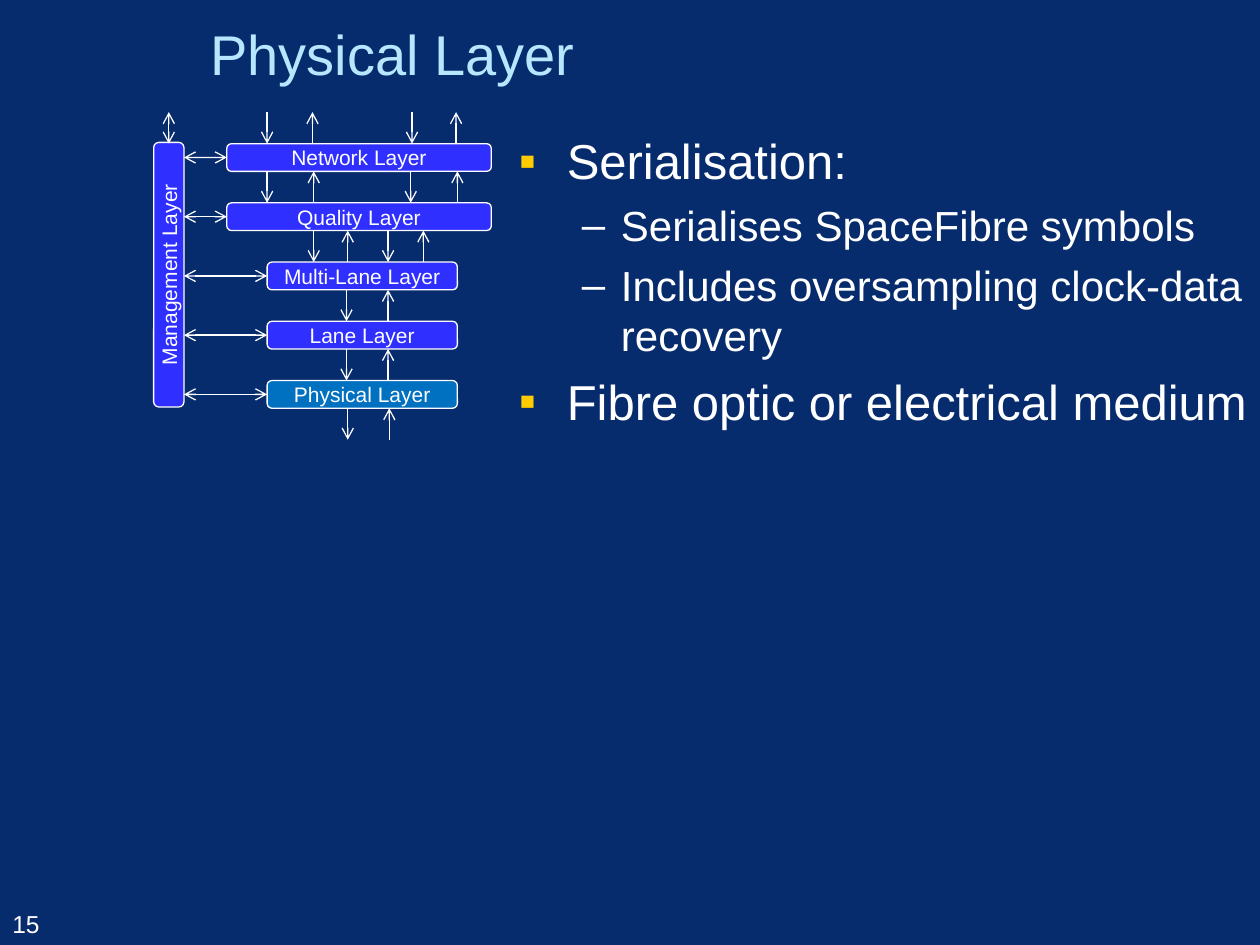
from typing import NamedTuple

from lxml import etree
from pptx import Presentation
from pptx.dml.color import RGBColor
from pptx.enum.shapes import MSO_CONNECTOR, MSO_SHAPE
from pptx.enum.text import MSO_ANCHOR, PP_ALIGN
from pptx.oxml.ns import qn
from pptx.util import Inches, Pt

STRAIGHT = MSO_CONNECTOR.STRAIGHT
ROUNDED = MSO_SHAPE.ROUNDED_RECTANGLE
MIDDLE, BOTTOM = MSO_ANCHOR.MIDDLE, MSO_ANCHOR.BOTTOM
LEFT, CENTER = PP_ALIGN.LEFT, PP_ALIGN.CENTER

NAVY = RGBColor(0x07, 0x2C, 0x6D)
PALE_BLUE = RGBColor(0xB7, 0xE7, 0xFF)
WHITE = RGBColor(0xFF, 0xFF, 0xFF)
VIOLET = RGBColor(0x2F, 0x2F, 0xFF)
BLUE = RGBColor(0x00, 0x70, 0xC0)
GOLD = RGBColor(0xFF, 0xCC, 0x00)

FONT = "Arial"
FIRST_ROW, ROW_PITCH = 1.14, 0.47
BOX_HEIGHT, ARROW_LENGTH = 0.22, 0.25
MANAGEMENT_RIGHT = 1.46


class Layer(NamedTuple):
    name: str
    left: float
    width: float
    color: RGBColor = VIOLET


class BulletStyle(NamedTuple):
    mark: str
    color: RGBColor
    size: int
    indent: float
    hanging: float
    space_before: float


class Item(NamedTuple):
    text: str
    level: int


LAYERS = [
    Layer("Network Layer", 1.8, 2.1),
    Layer("Quality Layer", 1.8, 2.1),
    Layer("Multi-Lane Layer", 2.12, 1.51),
    Layer("Lane Layer", 2.12, 1.51),
    Layer("Physical Layer", 2.12, 1.51, BLUE),
]
SIGNALS = [
    (2.12, 2.48, 3.27, 3.62),
    (2.12, 2.49, 3.26, 3.63),
    (2.49, 2.76, 3.08, 3.36),
    (2.75, 3.08),
    (2.75, 3.08),
    (2.76, 3.09),
]
STYLES = [
    BulletStyle("▪", GOLD, 28, 0.38, 0.38, 6.4),
    BulletStyle("–", WHITE, 24, 0.81, 0.31, 5.5),
]
ITEMS = [
    Item("Serialisation:", 0),
    Item("Serialises SpaceFibre symbols", 1),
    Item("Includes oversampling clock-data recovery", 1),
    Item("Fibre optic or electrical medium", 0),
]


def format_paragraph(paragraph, size: float, color: RGBColor, alignment=LEFT) -> None:
    paragraph.alignment = alignment
    paragraph.font.name = FONT
    paragraph.font.size = Pt(size)
    paragraph.font.color.rgb = color


def add_bullet(paragraph, style: BulletStyle) -> None:
    properties = paragraph._p.get_or_add_pPr()
    properties.set("marL", str(Inches(style.indent)))
    properties.set("indent", str(-Inches(style.hanging)))
    bullet_color = etree.SubElement(properties, qn("a:buClr"))
    etree.SubElement(bullet_color, qn("a:srgbClr"), val=str(style.color))
    etree.SubElement(properties, qn("a:buFont"), typeface=FONT)
    etree.SubElement(properties, qn("a:buChar"), char=style.mark)


def add_box(slide, name: str, left: float, top: float, width: float,
            height: float, color: RGBColor):
    box = slide.shapes.add_shape(
        ROUNDED, Inches(left), Inches(top), Inches(width), Inches(height))
    box.adjustments[0] = 0.17
    box.shadow.inherit = False
    box.fill.solid()
    box.fill.fore_color.rgb = color
    box.line.color.rgb = WHITE
    box.line.width = Pt(0.75)
    frame = box.text_frame
    frame.word_wrap = False
    frame.vertical_anchor = MIDDLE
    frame.margin_left = frame.margin_right = frame.margin_top = frame.margin_bottom = 0
    frame.text = name
    format_paragraph(frame.paragraphs[0], 12, WHITE, CENTER)
    return box


def add_arrow(slide, start: tuple[float, float], end: tuple[float, float],
              both_ends: bool = False):
    arrow = slide.shapes.add_connector(
        STRAIGHT, *(Inches(value) for value in (*start, *end)))
    arrow.line.color.rgb = WHITE
    arrow.line.width = Pt(0.75)
    line = arrow.line._get_or_add_ln()
    if both_ends:
        etree.SubElement(line, qn("a:headEnd"), type="arrow")
    etree.SubElement(line, qn("a:tailEnd"), type="arrow")
    etree.SubElement(arrow._element.spPr, qn("a:effectLst"))
    return arrow


def add_title(slide) -> None:
    title = slide.shapes.title
    title.left, title.top = Inches(1.57), Inches(0)
    title.width, title.height = Inches(8.43), Inches(0.84)
    title.text_frame.text = "Physical Layer"
    title.text_frame.vertical_anchor = MIDDLE
    format_paragraph(title.text_frame.paragraphs[0], 32, PALE_BLUE)


def add_text_frame(slide, left: float, top: float, width: float, height: float):
    text_box = slide.shapes.add_textbox(
        Inches(left), Inches(top), Inches(width), Inches(height))
    text_box.text_frame.word_wrap = True
    return text_box.text_frame


def add_bullet_list(slide) -> None:
    frame = add_text_frame(slide, 4.02, 0.99, 5.98, 6.51)
    for index, item in enumerate(ITEMS):
        paragraph = frame.add_paragraph() if index else frame.paragraphs[0]
        style = STYLES[item.level]
        paragraph.text = item.text
        paragraph.level = item.level
        paragraph.space_before = Pt(style.space_before)
        format_paragraph(paragraph, style.size, WHITE)
        add_bullet(paragraph, style)


def add_slide_number(slide) -> None:
    frame = add_text_frame(slide, 0, 6.98, 1.06, 0.52)
    frame.vertical_anchor = BOTTOM
    frame.text = "15"
    format_paragraph(frame.paragraphs[0], 14, WHITE)


def add_layer_stack(slide) -> None:
    management = add_box(slide, "Management Layer", 0.29, 2.06, 2.1, 0.24, VIOLET)
    management.rotation = 270
    add_arrow(slide, (1.34, FIRST_ROW - ARROW_LENGTH), (1.34, FIRST_ROW), True)

    for row, layer in enumerate(LAYERS):
        top = FIRST_ROW + row * ROW_PITCH
        middle = top + BOX_HEIGHT / 2
        box = add_box(slide, layer.name, layer.left, top, layer.width,
                      BOX_HEIGHT, layer.color)
        link = add_arrow(slide, (MANAGEMENT_RIGHT, middle), (layer.left, middle), True)
        link.end_connect(box, 1)

    for row, positions in enumerate(SIGNALS):
        lower = FIRST_ROW + row * ROW_PITCH
        upper = lower - ARROW_LENGTH
        for index, x in enumerate(positions):
            start, end = (upper, lower) if index % 2 == 0 else (lower, upper)
            add_arrow(slide, (x, start), (x, end))


def main() -> None:
    presentation = Presentation()
    presentation.slide_width = Inches(10)
    presentation.slide_height = Inches(7.5)
    slide = presentation.slides.add_slide(presentation.slide_layouts[5])
    slide.background.fill.solid()
    slide.background.fill.fore_color.rgb = NAVY
    add_title(slide)
    add_bullet_list(slide)
    add_slide_number(slide)
    add_layer_stack(slide)
    presentation.save("out.pptx")


if __name__ == "__main__":
    main()
